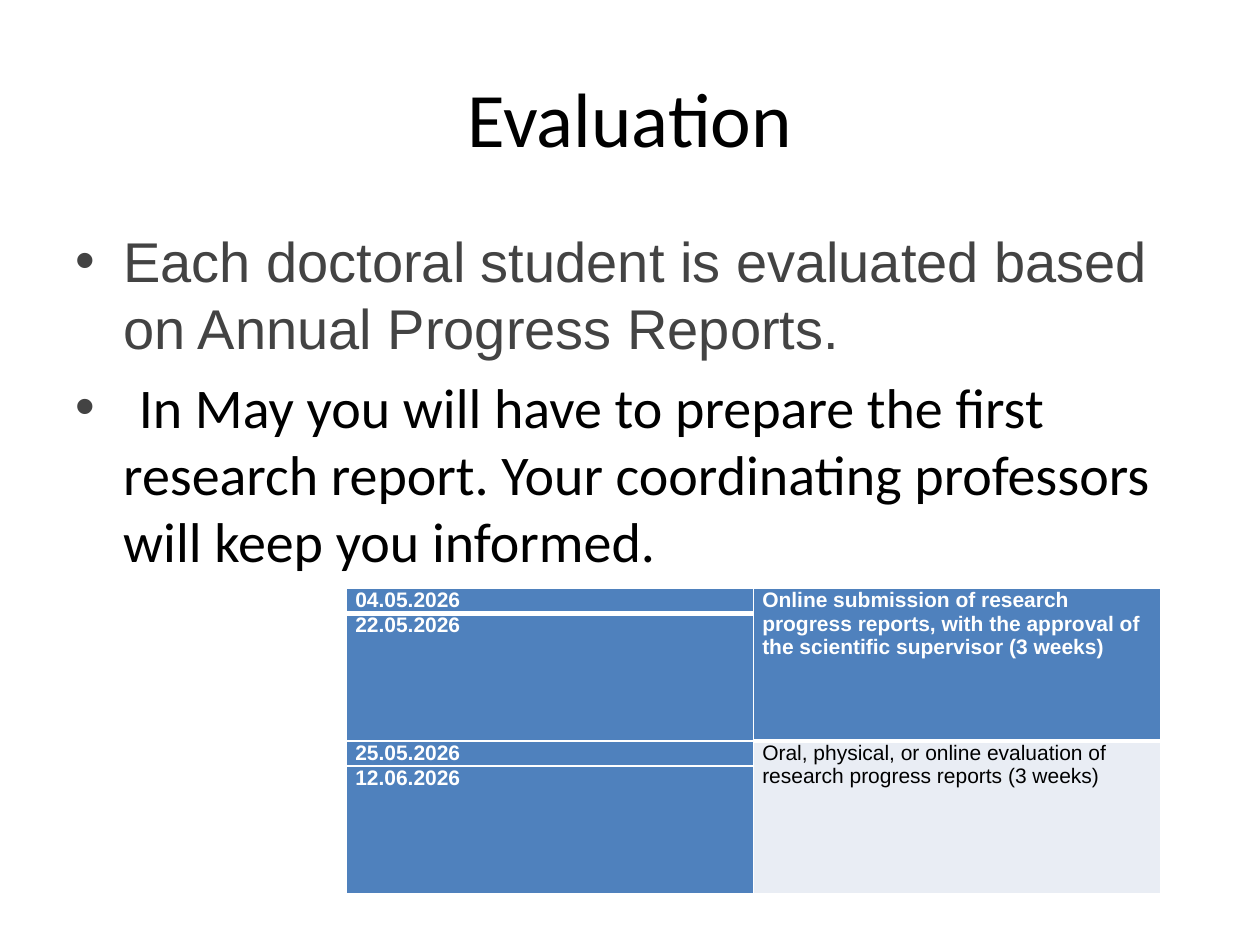
from dataclasses import dataclass

from lxml import etree
from pptx import Presentation
from pptx.dml.color import RGBColor
from pptx.enum import text as t
from pptx.oxml import ns
from pptx.util import Inches, Pt

BLACK = RGBColor(0x00, 0x00, 0x00)
WHITE = RGBColor(0xFF, 0xFF, 0xFF)
GREY = RGBColor(0x43, 0x43, 0x43)
BLUE = RGBColor(0x4F, 0x81, 0xBD)
PALE = RGBColor(0xE9, 0xED, 0xF4)


@dataclass
class Item:
    text: str
    font: str
    color: RGBColor
    lead: str = ""


@dataclass
class Entry:
    row: int
    col: int
    text: str
    fill: RGBColor = BLUE
    color: RGBColor = WHITE
    bold: bool = True
    edge: int = 1
    span: int = 1


ITEMS = [
    Item("Each doctoral student is evaluated based on Annual Progress Reports.",
         "Arial", GREY),
    Item("In May you will have to prepare the first research report. "
         "Your coordinating professors will keep you informed.",
         "Calibri", BLACK, lead=" "),
]
ENTRIES = [
    Entry(0, 0, "04.05.2026", edge=3),
    Entry(1, 0, "22.05.2026"),
    Entry(2, 0, "25.05.2026"),
    Entry(3, 0, "12.06.2026"),
    Entry(0, 1, "Online submission of research progress reports, with the "
          "approval of the scientific supervisor (3 weeks)", edge=3, span=2),
    Entry(2, 1, "Oral, physical, or online evaluation of research progress "
          "reports (3 weeks)", PALE, BLACK, bold=False, span=2),
]


def style(font, name: str, size: float, color: RGBColor, bold=False) -> None:
    font.name, font.size, font.bold = name, Pt(size), bold
    font.color.rgb = color


def add_box(slide, left: float, top: float, width: float, height: float):
    box = slide.shapes.add_textbox(
        Inches(left), Inches(top), Inches(width), Inches(height))
    box.text_frame.word_wrap = True
    return box.text_frame


def add_bullet(para) -> None:
    props = para._p.get_or_add_pPr()
    props.set("marL", str(Inches(0.38)))
    props.set("indent", str(-Inches(0.38)))
    tint = etree.SubElement(props, ns.qn("a:buClr"))
    etree.SubElement(tint, ns.qn("a:srgbClr"), val=str(GREY))
    etree.SubElement(props, ns.qn("a:buFont"), typeface="Arial")
    etree.SubElement(props, ns.qn("a:buChar"), char="•")


def add_item(para, item: Item) -> None:
    add_bullet(para)
    if item.lead:
        run = para.add_run()
        run.text = item.lead
        style(run.font, "Arial", 32, GREY)
    run = para.add_run()
    run.text = item.text
    style(run.font if item.lead else para.font, item.font, 32, item.color)


def set_edges(cell, base: int) -> None:
    props = cell._tc.get_or_add_tcPr()
    sides = {"lnL": 1, "lnR": 1, "lnT": 1, "lnB": base}
    for spot, (side, width) in enumerate(sides.items()):
        line = etree.Element(ns.qn(f"a:{side}"), w=str(Pt(width)))
        fill = etree.SubElement(line, ns.qn("a:solidFill"))
        etree.SubElement(fill, ns.qn("a:srgbClr"), val=str(WHITE))
        props.insert(spot, line)


def fill_cell(table, entry: Entry) -> None:
    cell = table.cell(entry.row, entry.col)
    last = table.cell(entry.row + entry.span - 1, entry.col)
    if entry.span > 1:
        cell.merge(last)
    cell.text = entry.text
    style(cell.text_frame.paragraphs[0].font, "Arial", 12,
          entry.color, entry.bold)
    for part in {entry.row, entry.row + entry.span - 1}:
        piece = table.cell(part, entry.col)
        piece.margin_left = piece.margin_right = Inches(0.07)
        piece.margin_top = piece.margin_bottom = 0
        piece.fill.solid()
        piece.fill.fore_color.rgb = entry.fill
        set_edges(piece, entry.edge)


def main() -> None:
    deck = Presentation()
    deck.slide_width, deck.slide_height = Inches(10), Inches(7.5)
    slide = deck.slides.add_slide(deck.slide_layouts[6])

    # Title
    frame = add_box(slide, 0.5, 0.3, 9, 1.25)
    frame.vertical_anchor = t.MSO_ANCHOR.MIDDLE
    title = frame.paragraphs[0]
    title.text = "Evaluation"
    title.alignment = t.PP_ALIGN.CENTER
    style(title.font, "Calibri", 44, BLACK)

    # Bulleted text
    frame = add_box(slide, 0.5, 1.75, 9.17, 5.58)
    for spot, item in enumerate(ITEMS):
        para = frame.add_paragraph() if spot else frame.paragraphs[0]
        if spot:
            para.space_before = Pt(6.4)
        add_item(para, item)

    # Schedule
    rows = [0.2, 1.01] * 2
    table = slide.shapes.add_table(
        len(rows), 2, Inches(2.75), Inches(4.67),
        Inches(6.46), Inches(sum(rows))).table
    for row, height in zip(table.rows, rows):
        row.height = Inches(height)
    for entry in ENTRIES:
        fill_cell(table, entry)

    deck.save("out.pptx")


if __name__ == "__main__":
    main()
